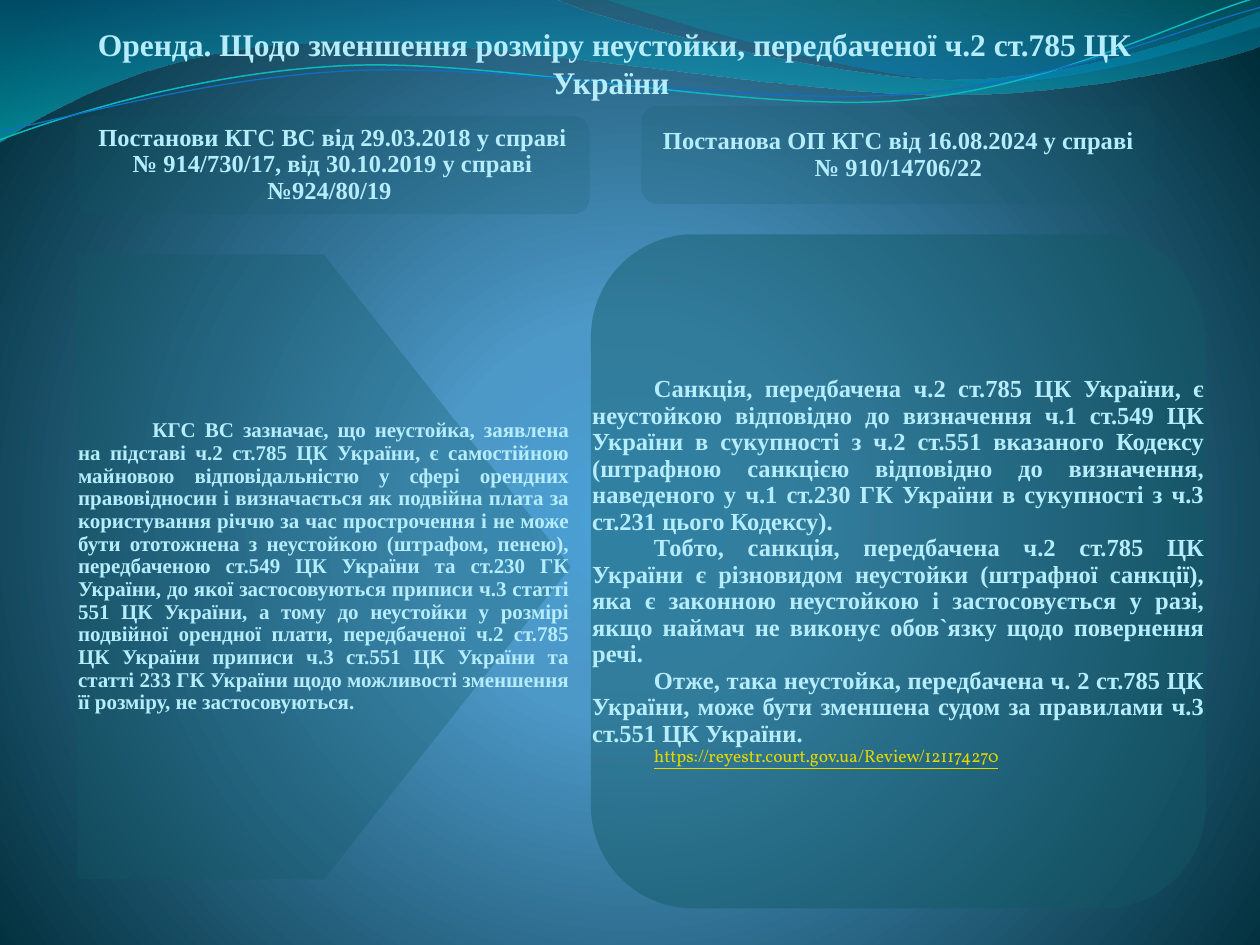
import dataclasses

import lxml.etree
import pptx
import pptx.dml.color
import pptx.enum.shapes
import pptx.enum.text
import pptx.oxml.ns
import pptx.util

Inches = pptx.util.Inches
Shape = pptx.enum.shapes.MSO_SHAPE
Align = pptx.enum.text.PP_ALIGN
Anchor = pptx.enum.text.MSO_ANCHOR
qn = pptx.oxml.ns.qn


@dataclasses.dataclass(frozen=True)
class Theme:
    """Colours, fonts and type sizes of the slide."""
    text: str = "B5EDFD"
    panel: str = "115964"
    link: str = "E2D700"
    aqua: str = "0AB8BF"
    blue: str = "0F6FC6"
    font: str = "Times New Roman"
    web: str = "Vollkorn"
    title: float = 18
    head: float = 14
    body: float = 14
    small: float = 12
    url: float = 10
    glow: tuple = ((0, "4AA0D6", 100), (25, "4C98C7", 100), (100, "002C38", 100))
    left: tuple = ((0, "0074A1", 45), (100, "00C6CF", 55))
    right: tuple = ((0, "00A1A9", 30), (80, "008BBF", 45))


THEME = Theme()

BANDS = (
    (THEME.left, (0, 0), (
        ((4.4, -0.01),),
        ((4.76, 0.17), (6.64, 0.63), (7.58, 0.63)),
        ((8.53, 0.63), (9.58, 0.26), (10, 0.09)),
        ((10.01, 0.36),),
        ((9.83, 0.44), (8.7, 0.76), (7.46, 0.75)),
        ((6.22, 0.75), (3.82, 0.28), (2.57, 0.34)),
        ((1.29, 0.36), (0.46, 0.83), (-0.01, 1.13)),
        ((0, 0),))),
    (THEME.right, (4.79, -0.01), (
        ((5.09, 0.11), (6.82, 0.62), (7.69, 0.65)),
        ((8.56, 0.69), (9.61, 0.32), (10, 0.21)),
        ((10, 0),),
        ((4.79, -0.01),))),
)

LINES = (
    (THEME.aqua, 0.85, (0, 1.11), (
        ((0.48, 0.93), (1.58, 0.57), (2.77, 0.52)),
        ((3.95, 0.47), (5.93, 0.89), (7.13, 0.8)),
        ((8.33, 0.71), (9.38, 0.15), (9.98, -0.02)))),
    (THEME.blue, 0.75, (0, 1.04), (
        ((0.47, 0.96), (1.64, 0.61), (2.83, 0.56)),
        ((4.03, 0.51), (5.97, 0.84), (7.17, 0.75)),
        ((8.36, 0.67), (9.41, 0.21), (10, 0.06)))),
)

CLAIM = (
    "КГС ВС зазначає, що неустойка, заявлена на підставі ч.2 ст.785 ЦК України, є самостійною "
    "майновою відповідальністю у сфері орендних правовідносин і визначається як подвійна плата за "
    "користування річчю за час прострочення і не може бути ототожнена з неустойкою (штрафом, пенею), "
    "передбаченою ст.549 ЦК України та ст.230 ГК України, до якої застосовуються приписи ч.3 статті "
    "551 ЦК України, а тому до неустойки у розмірі подвійної орендної плати, передбаченої ч.2 ст.785 "
    "ЦК України приписи ч.3 ст.551 ЦК України та статті 233 ГК України щодо можливості зменшення "
    "її розміру, не застосовуються.",
)

RULING = (
    "Санкція, передбачена ч.2 ст.785 ЦК України, є неустойкою відповідно до визначення ч.1 ст.549 ЦК "
    "України в сукупності з ч.2 ст.551 вказаного Кодексу (штрафною санкцією відповідно до визначення, "
    "наведеного у ч.1 ст.230 ГК України в сукупності з ч.3 ст.231 цього Кодексу).",
    "Тобто, санкція, передбачена ч.2 ст.785 ЦК України є різновидом неустойки (штрафної санкції), яка є "
    "законною неустойкою і застосовується у разі, якщо наймач не виконує обов`язку щодо повернення речі.",
    "Отже, така неустойка, передбачена ч. 2 ст.785 ЦК України, може бути зменшена судом за правилами "
    "ч.3 ст.551 ЦК України.",
)


def tint(code):
    """Turn a hex code into a colour."""
    return pptx.dml.color.RGBColor.from_string(code)


def fade(node, part):
    """Give a colour node an opacity in percent."""
    if part < 100:
        lxml.etree.SubElement(node, qn("a:alpha"), val=str(part * 1000))


def blend(fill, stops, angle=None):
    """Fill with gradient stops, along an angle or out from the centre."""
    fill.gradient()
    grad = fill._fill._gradFill
    for node in list(grad):
        grad.remove(node)
    row = lxml.etree.SubElement(grad, qn("a:gsLst"))
    for pos, code, part in stops:
        stop = lxml.etree.SubElement(row, qn("a:gs"), pos=str(pos * 1000))
        fade(lxml.etree.SubElement(stop, qn("a:srgbClr"), val=code), part)
    if angle is None:
        ring = lxml.etree.SubElement(grad, qn("a:path"), path="circle")
        lxml.etree.SubElement(ring, qn("a:fillToRect"), l="10000", t="110000", r="10000", b="100000")
    else:
        lxml.etree.SubElement(grad, qn("a:lin"), ang=str(angle * 60000), scaled="1")


def curve(slide, start, parts, close):
    """Draw one outline of straight and cubic parts."""
    form = slide.shapes.build_freeform(*map(Inches, start))
    form.add_line_segments([tuple(map(Inches, part[-1])) for part in parts], close=close)
    shape = form.convert_to_shape()
    shape.shadow.inherit = False
    for node, part in zip(list(shape._element.iter(qn("a:lnTo"))), parts):
        if len(part) == 3:
            bend = lxml.etree.Element(qn("a:cubicBezTo"))
            for x, y in part:
                lxml.etree.SubElement(bend, qn("a:pt"), x=str(Inches(x) - shape.left),
                                      y=str(Inches(y) - shape.top))
            node.getparent().replace(node, bend)
    return shape


def waves(slide):
    """Draw the bands and lines along the top edge."""
    for stops, start, parts in BANDS:
        band = curve(slide, start, parts, True)
        blend(band.fill, stops, 90)
        band.line.fill.background()
    for code, width, start, parts in LINES:
        line = curve(slide, start, parts, False)
        line.fill.background()
        line.line.color.rgb = tint(code)
        line.line.width = pptx.util.Pt(width)


def setup(frame, anchor, pad):
    """Set the wrap, anchor and inner margins of a text frame."""
    frame.word_wrap = True
    frame.auto_size = pptx.enum.text.MSO_AUTO_SIZE.NONE
    frame.vertical_anchor = anchor
    frame.margin_left = frame.margin_right = frame.margin_top = frame.margin_bottom = Inches(pad)


def write(frame, text, size, font=THEME.font, color=THEME.text, bold=True, under=False,
          align=Align.CENTER, indent=0, space=0.9):
    """Add one formatted paragraph to a text frame."""
    para = frame.paragraphs[0] if not frame.text else frame.add_paragraph()
    para.alignment = align
    para.line_spacing = space
    para.space_before = para.space_after = pptx.util.Pt(0)
    if indent:
        para._p.get_or_add_pPr().set("indent", str(Inches(indent)))
    run = para.add_run()
    run.text = text
    run.font.size = pptx.util.Pt(size)
    run.font.name = font
    run.font.bold = bold
    run.font.underline = under
    run.font.color.rgb = tint(color)


def panel(slide, kind, box, part):
    """Draw a translucent panel in the given box."""
    shape = slide.shapes.add_shape(kind, *map(Inches, box))
    shape.shadow.inherit = False
    shape.fill.solid()
    shape.fill.fore_color.rgb = tint(THEME.panel)
    fade(shape.fill._fill._solidFill[0], part)
    shape.line.fill.background()
    return shape


def header(slide, text, box, part):
    """Place a column header in the given box."""
    frame = panel(slide, Shape.ROUNDED_RECTANGLE, box, part).text_frame
    setup(frame, Anchor.MIDDLE, 0.06)
    write(frame, text, THEME.head)


def column(slide, kind, box, part, texts, size, indent, url=None):
    """Place a panel with justified text over its full box."""
    panel(slide, kind, box, part)
    frame = slide.shapes.add_textbox(*map(Inches, box)).text_frame
    setup(frame, Anchor.MIDDLE, 0.01)
    for text in texts:
        write(frame, text, size, align=Align.JUSTIFY, indent=indent)
    if url:
        write(frame, url, THEME.url, font=THEME.web, color=THEME.link, bold=False, under=True,
              align=Align.JUSTIFY, indent=indent)


def heading(slide, text, box):
    """Place the title in the given box, in front of the waves."""
    title = slide.shapes.title
    title.left, title.top, title.width, title.height = map(Inches, box)
    setup(title.text_frame, Anchor.TOP, 0)
    write(title.text_frame, text, THEME.title, space=1)
    slide.shapes._spTree.append(title._element)


def main():
    """Build and save the slide."""
    deck = pptx.Presentation()
    deck.slide_width, deck.slide_height = Inches(10), Inches(7.5)
    slide = deck.slides.add_slide(deck.slide_layouts[5])
    blend(slide.background.fill, THEME.glow)
    waves(slide)
    heading(slide, "Оренда. Щодо зменшення розміру неустойки, передбаченої ч.2 ст.785 ЦК України ",
            (0.67, 0.2, 8.42, 0.62))
    column(slide, Shape.PENTAGON, (0.61, 2.02, 3.92, 4.96), 29, CLAIM, THEME.small, 0.59)
    column(slide, Shape.FLOWCHART_ALTERNATE_PROCESS, (4.69, 1.86, 4.88, 5.35), 44, RULING,
           THEME.body, 0.49, "https://reyestr.court.gov.ua/Review/121174270")
    header(slide, "Постанови КГС ВС від 29.03.2018 у справі № 914/730/17, від 30.10.2019 у справі №924/80/19 ",
           (0.6, 0.92, 4.08, 0.78), 17)
    header(slide, "Постанова ОП КГС від 16.08.2024 у справі № 910/14706/22", (5.09, 0.84, 4.08, 0.78), 16)
    deck.save("out.pptx")


if __name__ == "__main__":
    main()
